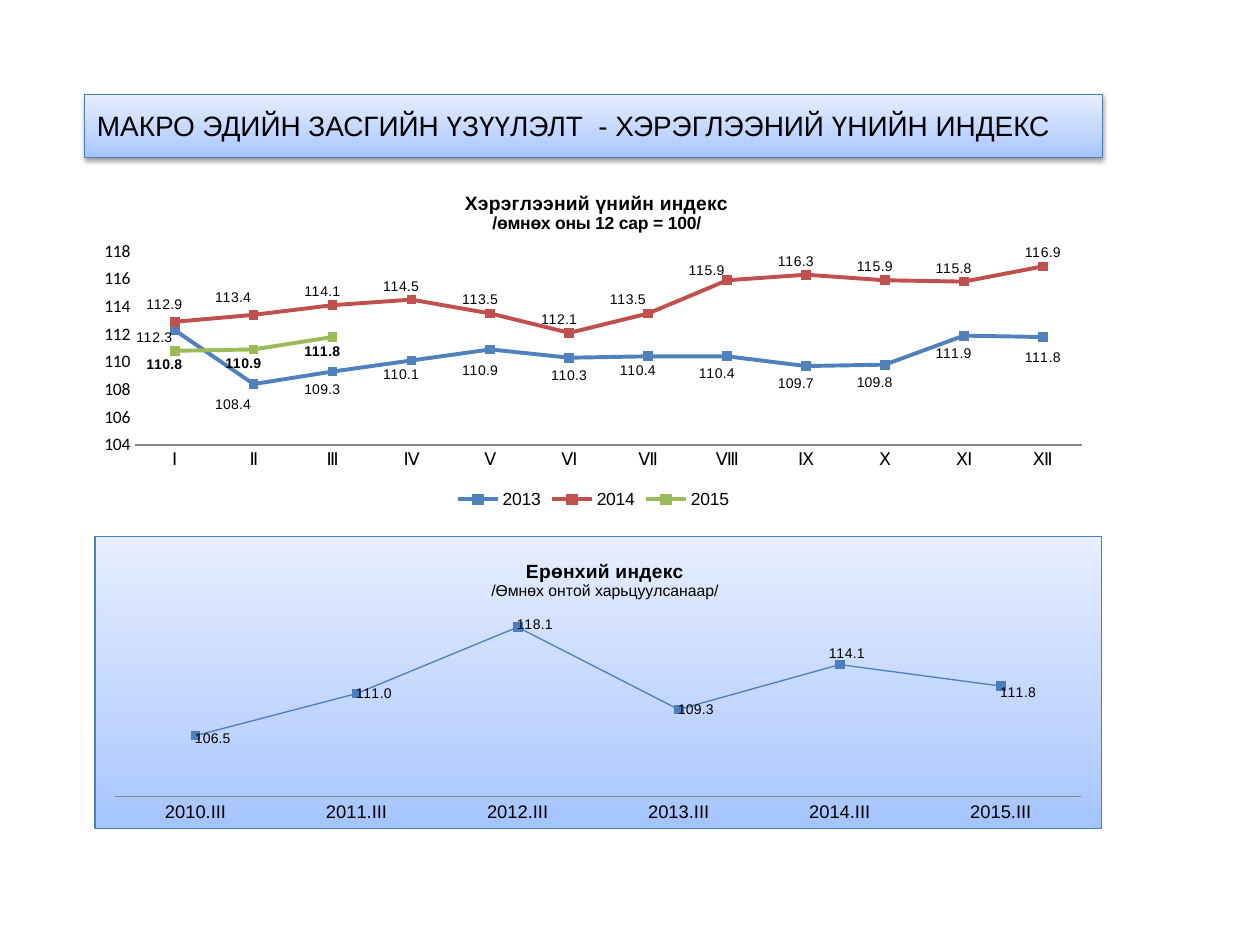
import pptx
import pptx.chart.data
import pptx.dml.color
import pptx.enum.chart
import pptx.enum.text
import pptx.oxml
import pptx.oxml.ns
import pptx.util

Cm = pptx.util.Cm
Pt = pptx.util.Pt
LabelPosition = pptx.enum.chart.XL_LABEL_POSITION
BLUE = "4B7EBC"
BLACK = "000000"
PANEL_STOPS = {0: "A4C4FF", 35: "BFD4FF", 100: "E6EEFF"}

MONTHS = list("ⅠⅡⅢⅣⅤⅥⅦⅧⅨⅩⅪⅫ")
MONTHLY_INDEX = [
    {"name": "2013", "color": "4F81BD", "position": LabelPosition.BELOW, "bold": False,
     "values": [112.3, 108.4, 109.3, 110.1, 110.9, 110.3, 110.4, 110.4, 109.7, 109.8, 111.9, 111.8],
     "shifts": [(-0.02, -0.03), (-0.02, 0.01), (-0.01, 0), (-0.01, -0.01), (-0.01, 0.01), (0, 0),
                (-0.01, -0.01), (-0.01, 0), (-0.01, 0), (-0.01, 0), (-0.01, 0), (0, 0.01)]},
    {"name": "2014", "color": "C0504D", "position": LabelPosition.ABOVE, "bold": False,
     "values": [112.9, 113.4, 114.1, 114.5, 113.5, 112.1, 113.5, 115.9, 116.3, 115.9, 115.8, 116.9],
     "shifts": [(-0.01, 0), (-0.02, 0), (-0.01, 0.01), (-0.01, 0.01), (-0.01, 0.01), (-0.01, 0.01),
                (-0.02, 0.01), (-0.02, 0.02), (-0.01, 0.01), (-0.01, 0.01), (-0.01, 0.01), (0, 0.01)]},
    {"name": "2015", "color": "9BBB59", "position": LabelPosition.BELOW, "bold": True,
     "values": [110.8, 110.9, 111.8] + [None] * 9,
     "shifts": [(-0.01, -0.01)] * 3},
]
YEARS = [f"{year}.III" for year in range(2010, 2016)]
YEARLY_INDEX = [
    {"name": "Series 1", "color": BLUE, "position": LabelPosition.RIGHT, "bold": False,
     "values": [106.5, 111, 118.1, 109.3, 114.1, 111.8],
     "shifts": [(-0.01, 0.01), (-0.01, 0), (-0.01, -0.01), (-0.01, 0), (-0.02, -0.04), (-0.01, 0.02)]},
]


def rgb(value):
    return pptx.dml.color.RGBColor.from_string(value)


def apply(target, formats):
    for attribute, value in formats.items():
        setattr(target, attribute, value)


def style_font(font, size, bold=False, name="Arial"):
    apply(font, {"name": name, "size": Pt(size), "bold": bold})
    font.color.rgb = rgb(BLACK)


def parse_drawing(markup):
    return pptx.oxml.parse_xml(markup.replace(">", f" {pptx.oxml.ns.nsdecls('a', 'c')}>", 1))


def panel_properties(extra=""):
    stops = "".join(
        f'<a:gs pos="{place * 1000}"><a:srgbClr val="{color}"/></a:gs>'
        for place, color in PANEL_STOPS.items()
    )
    return parse_drawing(
        f'<c:spPr><a:gradFill rotWithShape="1"><a:gsLst>{stops}</a:gsLst>'
        f'<a:lin ang="16200000" scaled="0"/></a:gradFill><a:ln w="{Pt(0.75)}">'
        f'<a:solidFill><a:srgbClr val="{BLUE}"/></a:solidFill></a:ln>{extra}</c:spPr>'
    )


def set_layout(parent, index, modes, **fractions):
    for old in parent.xpath("c:layout"):
        parent.remove(old)
    fields = "".join(f'<c:{tag} val="{value}"/>' for tag, value in {**modes, **fractions}.items())
    parent.insert(index, parse_drawing(f"<c:layout><c:manualLayout>{fields}</c:manualLayout></c:layout>"))


def add_heading(slide, text):
    heading = slide.shapes.title
    apply(heading, {"left": Cm(1.7), "top": Cm(1.9), "width": Cm(20.53), "height": Cm(1.27)})
    shadow = (
        f'<a:effectLst><a:outerShdw blurRad="{Pt(3.1)}" dist="{Pt(1.6)}" dir="5400000" rotWithShape="0">'
        f'<a:srgbClr val="{BLACK}"><a:alpha val="38000"/></a:srgbClr></a:outerShdw></a:effectLst>'
    )
    for part in list(panel_properties(shadow)):
        heading.element.spPr.append(part)
    frame = heading.text_frame
    frame.text = text
    apply(frame, {
        "word_wrap": True,
        "auto_size": pptx.enum.text.MSO_AUTO_SIZE.NONE,
        "vertical_anchor": pptx.enum.text.MSO_ANCHOR.MIDDLE,
    })
    frame.paragraphs[0].alignment = pptx.enum.text.PP_ALIGN.LEFT
    style_font(frame.paragraphs[0].runs[0].font, 16)


def add_line_chart(slide, box, categories, rows, line_width):
    data = pptx.chart.data.CategoryChartData(number_format="0.0")
    data.categories = categories
    for row in rows:
        data.add_series(row["name"], row["values"])
    chart = slide.shapes.add_chart(
        pptx.enum.chart.XL_CHART_TYPE.LINE_MARKERS, *map(Cm, box), data
    ).chart
    style_font(chart.font, 10, name="Calibri")
    chart.has_legend = False
    for series, row in zip(chart.plots[0].series, rows):
        style_series(series, row, line_width)
    shifts = [shift for row in rows for shift in row["shifts"]]
    for label, (x, y) in zip(chart.element.xpath(".//c:dLbl"), shifts):
        set_layout(label, 1, {}, x=x, y=y)
    return chart


def style_series(series, row, line_width):
    color = rgb(row["color"])
    series.smooth = False
    series.format.line.width = Pt(line_width)
    series.format.line.color.rgb = color
    apply(series.marker, {"style": pptx.enum.chart.XL_MARKER_STYLE.SQUARE, "size": 5})
    series.marker.format.fill.solid()
    series.marker.format.fill.fore_color.rgb = color
    series.marker.format.line.color.rgb = color
    apply(series.data_labels, {"show_value": True, "number_format": "0.0", "number_format_is_linked": False})
    style_font(series.data_labels.font, 8, row["bold"])
    for index in range(len(row["shifts"])):
        label = series.points[index].data_label
        style_font(label.font, 8, row["bold"])
        label.position = row["position"]


def add_chart_title(chart, lines, x, y):
    frame = chart.chart_title.text_frame
    frame.text = "\n".join(text for text, size, bold in lines)
    for paragraph, (text, size, bold) in zip(frame.paragraphs, lines):
        style_font(paragraph.runs[0].font, size, bold)
    chart.chart_title.include_in_layout = False
    title = chart.element.xpath("c:chart/c:title")[0]
    set_layout(title, 1, {"xMode": "edge", "yMode": "edge"}, x=x, y=y)


def style_axes(chart, category_size, value_formats, **plot_area):
    no_ticks = {"major_tick_mark": pptx.enum.chart.XL_TICK_MARK.NONE,
                "minor_tick_mark": pptx.enum.chart.XL_TICK_MARK.NONE,
                "has_major_gridlines": False}
    apply(chart.category_axis, no_ticks)
    style_font(chart.category_axis.tick_labels.font, category_size)
    chart.category_axis.format.line.color.rgb = rgb("868686")
    apply(chart.value_axis, {**no_ticks, **value_formats})
    chart.value_axis.format.line.fill.background()
    apply(chart.value_axis.tick_labels, {"number_format": "General", "number_format_is_linked": False})
    modes = {"layoutTarget": "inner", "xMode": "edge", "yMode": "edge"}
    set_layout(chart.element.xpath("c:chart/c:plotArea")[0], 0, modes, **plot_area)


def add_legend(chart):
    chart.has_legend = True
    apply(chart.legend, {"position": pptx.enum.chart.XL_LEGEND_POSITION.BOTTOM, "include_in_layout": False})
    style_font(chart.legend.font, 10)


def main():
    deck = pptx.Presentation()
    apply(deck, {"slide_width": Cm(25.4), "slide_height": Cm(19.05)})
    slide = deck.slides.add_slide(deck.slide_layouts[5])

    monthly = add_line_chart(slide, (1.7, 3.39, 20.53, 6.98), MONTHS, MONTHLY_INDEX, 2.25)
    add_chart_title(monthly, [("Хэрэглээний үнийн индекс", 11, True),
                              ("/өмнөх оны 12 сар = 100/", 10, True)], 0.37, 0.05)
    style_axes(monthly, 10, {"minimum_scale": 104, "maximum_scale": 118, "major_unit": 2},
               x=0.05, y=0.24, w=0.93, h=0.56)
    add_legend(monthly)

    yearly = add_line_chart(slide, (1.9, 10.8, 20.32, 5.92), YEARS, YEARLY_INDEX, 0.75)
    add_chart_title(yearly, [("Ерөнхий индекс", 11, True),
                             ("/Өмнөх онтой харьцуулсанаар/", 9, False)], 0.39, 0.06)
    style_axes(yearly, 10.5, {"minimum_scale": 100, "maximum_scale": 120, "visible": False},
               x=0.02, y=0.25, w=0.96, h=0.64)
    yearly.element.xpath("c:chart")[0].addnext(panel_properties())

    add_heading(slide, "МАКРО ЭДИЙН ЗАСГИЙН ҮЗҮҮЛЭЛТ  - ХЭРЭГЛЭЭНИЙ ҮНИЙН ИНДЕКС")
    deck.save("out.pptx")


if __name__ == "__main__":
    main()
